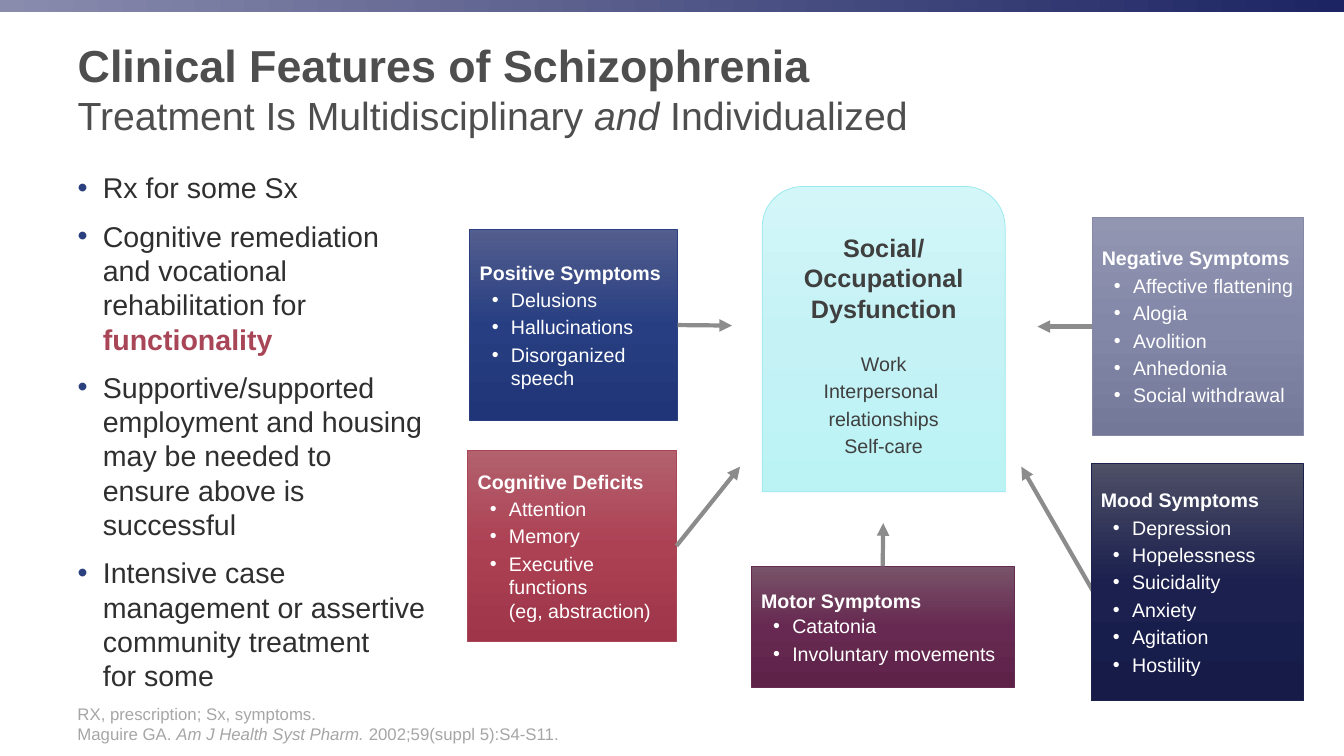
"""Build a slide on the clinical features of schizophrenia."""
from copy import deepcopy

from lxml.etree import SubElement
from pptx import Presentation
from pptx.dml.color import RGBColor as Rgb
from pptx.enum.shapes import MSO_CONNECTOR as Connector, MSO_SHAPE as Preset
from pptx.enum.text import MSO_ANCHOR as Anchor, MSO_AUTO_SIZE as AutoSize, PP_ALIGN as Align
from pptx.oxml.ns import qn
from pptx.util import Inches, Pt

TITLE = [("Clinical Features of Schizophrenia \n", "title"),
         ("Treatment Is Multidisciplinary ", "subtitle"),
         ("and", "subtitle_italic"), (" Individualized", "subtitle")]
TREATMENTS = [
    [("Rx for some Sx", "body")],
    [("Cognitive remediation and vocational rehabilitation for ", "body"),
     ("functionality", "body_accent")],
    [("Supportive/supported employment and housing may be needed to ensure above is successful",
      "body")],
    [("Intensive case management or assertive community treatment\nfor some", "body")],
]
FOOTNOTES = [
    [("RX, prescription; Sx, symptoms.", "note")],
    [("Maguire GA. ", "note"), ("Am J Health Syst Pharm.", "note_italic"),
     (" 2002;59(suppl 5):S4-S11.", "note")],
]
DYSFUNCTION = "Social/\nOccupational\nDysfunction"
AREAS = ["Work", "Interpersonal ", "relationships", "Self-care"]
SYMPTOMS = {
    "Motor Symptoms": ["Catatonia", "Involuntary movements"],
    "Negative Symptoms": ["Affective flattening", "Alogia", "Avolition", "Anhedonia",
                          "Social withdrawal"],
    "Mood Symptoms": ["Depression", "Hopelessness", "Suicidality", "Anxiety", "Agitation",
                      "Hostility"],
    "Positive Symptoms": ["Delusions", "Hallucinations", "Disorganized speech"],
    "Cognitive Deficits": ["Attention", "Memory", "Executive functions\n(eg, abstraction)"],
}
PLACES = {
    "Motor Symptoms": (7.45, 5.62, 2.61, 1.2),
    "Negative Symptoms": (10.83, 2.16, 2.1, 2.16),
    "Mood Symptoms": (10.82, 4.6, 2.11, 2.35),
    "Positive Symptoms": (4.66, 2.28, 2.06, 1.89),
    "Cognitive Deficits": (4.64, 4.47, 2.07, 1.89),
}
MOOD_ARROW = (10.93, 6.02, 10.13, 4.63)
ARROWS = {
    "Negative Symptoms": (1, 10.29, 3.24),
    "Motor Symptoms": (0, 8.76, 5.19),
    "Cognitive Deficits": (3, 7.34, 4.63),
    "Positive Symptoms": (3, 7.26, 3.23),
}
THEME = {
    "font": "Arial",
    "arrow": "8C8C8C",
    "bullet": "2B407E",
    "bullet_light": "FFFFFF",
    "bar": ["898CAD", "1C2463"],
    "text": {
        "title": (32, "4D4E4D", True, False),
        "subtitle": (28, "4D4E4D", False, False),
        "subtitle_italic": (28, "4D4E4D", False, True),
        "body": (20.4, "2F2F2F", False, False),
        "body_accent": (20.4, "A84657", True, False),
        "note": (12, "A6A6A6", False, False),
        "note_italic": (12, "A6A6A6", False, True),
        "heading": (14, "FFFFFF", True, False),
        "item": (14, "FFFFFF", False, False),
        "core": (18, "3F3F3F", True, False),
        "area": (14, "3F3F3F", False, False),
    },
    "panel": {
        "Motor Symptoms": (["785369", "672951", "5E2249"], "642C50"),
        "Negative Symptoms": (["9396B1", "8388A9", "737798"], "8589A7"),
        "Mood Symptoms": (["4E5066", "1B204E", "161B48"], "1D224C"),
        "Positive Symptoms": (["535E8E", "273E82", "1F3577"], "2B407E"),
        "Cognitive Deficits": (["B3616D", "AD4154", "9E3548"], "A84657"),
        "core": (["D3F6F8", "C4F2F5", "BBF3F5"], "98E9ED"),
    },
}
TIGHT = {"space_before": Pt(1.4), "space_after": Pt(1.4)}


def apply(target, values):
    """Set every attribute named in values."""
    for name, value in values.items():
        setattr(target, name, value)


def place(box, left, top, width, height):
    """Move and size a box given in inches."""
    apply(box, {"left": Inches(left), "top": Inches(top),
                "width": Inches(width), "height": Inches(height)})


def prepare(box, anchor):
    """Return the wrapped text frame of a box."""
    apply(box.text_frame, {"word_wrap": True, "auto_size": AutoSize.NONE,
                           "vertical_anchor": anchor})
    return box.text_frame


def write(frame, spans, bullet=None, indent=(0, 0), **layout):
    """Add a paragraph of styled spans to a frame."""
    para = frame.paragraphs[0] if not frame.text else frame.add_paragraph()
    apply(para, {"alignment": Align.LEFT, "space_before": Pt(0), **layout})
    for text, style in spans:
        size, color, bold, italic = THEME["text"][style]
        for number, line in enumerate(text.split("\n")):
            if number:
                para.add_line_break()
            if line:
                span = para.add_run()
                span.text = line
                apply(span.font, {"name": THEME["font"], "size": Pt(size),
                                  "bold": bold, "italic": italic})
                span.font.color.rgb = Rgb.from_string(color)
    if bullet:
        props = para._p.get_or_add_pPr()
        margin, hanging = indent
        props.set("marL", str(Inches(margin)))
        props.set("indent", str(-Inches(hanging)))
        SubElement(SubElement(props, qn("a:buClr")), qn("a:srgbClr"), val=bullet)
        SubElement(props, qn("a:buFont"), typeface=THEME["font"])
        SubElement(props, qn("a:buChar"), char="•")


def add_panel(page, preset, position, colors, angle, outline=None):
    """Add a shape with an evenly spaced gradient."""
    box = page.shapes.add_shape(preset, *map(Inches, position))
    box.shadow.inherit = False
    box.fill.gradient()
    box.fill.gradient_angle = angle
    stops = next(box._element.spPr.iter(qn("a:gsLst")))
    for _ in colors[2:]:
        stops.append(deepcopy(stops[0]))
    for number, (stop, color) in enumerate(zip(box.fill.gradient_stops, colors)):
        stop.color.rgb = Rgb.from_string(color)
        stop.position = number / (len(colors) - 1)
    if outline:
        box.line.color.rgb = Rgb.from_string(outline)
        box.line.width = Pt(0.5)
    else:
        box.line.fill.background()
    return box


def add_arrow(page, *ends):
    """Add a grey arrow between two points in inches."""
    arrow = page.shapes.add_connector(Connector.STRAIGHT, *map(Inches, ends))
    arrow.line.color.rgb = Rgb.from_string(THEME["arrow"])
    arrow.line.width = Pt(3)
    SubElement(arrow.line._get_or_add_ln(), qn("a:tailEnd"), type="triangle")
    SubElement(arrow._element.spPr, qn("a:effectLst"))
    return arrow


def main():
    """Compose and save the slide."""
    deck = Presentation()
    apply(deck, {"slide_width": Inches(13.33), "slide_height": Inches(7.5)})
    page = deck.slides.add_slide(deck.slide_layouts[1])
    add_panel(page, Preset.RECTANGLE, (0, 0, 13.33, 0.12), THEME["bar"], 0)

    title, body = page.placeholders
    place(title, 0.67, 0.22, 11.75, 1.3)
    write(prepare(title, Anchor.MIDDLE), TITLE)
    place(body, 0.67, 1.64, 3.65, 5.12)
    frame = prepare(body, Anchor.TOP)
    for spans in TREATMENTS:
        write(frame, spans, THEME["bullet"], (0.25, 0.25), space_before=Pt(10))

    add_arrow(page, *MOOD_ARROW)
    panels = {}
    for name, items in SYMPTOMS.items():
        colors, outline = THEME["panel"][name]
        panels[name] = add_panel(page, Preset.RECTANGLE, PLACES[name], colors, 270, outline)
        frame = prepare(panels[name], Anchor.MIDDLE)
        write(frame, [(name, "heading")], **({} if name == "Motor Symptoms" else TIGHT))
        for item in items:
            write(frame, [(item, "item")], THEME["bullet_light"], (0.31, 0.19), **TIGHT)

    colors, outline = THEME["panel"]["core"]
    core = add_panel(page, Preset.ROUND_2_SAME_RECTANGLE, (7.56, 1.85, 2.41, 3.03),
                     colors, 270, outline)
    frame = prepare(core, Anchor.MIDDLE)
    write(frame, [(DYSFUNCTION, "core")], alignment=Align.CENTER, space_after=Pt(19))
    for area in AREAS:
        write(frame, [(area, "area")], **TIGHT, alignment=Align.CENTER)

    for name, (side, *tip) in ARROWS.items():
        add_arrow(page, *tip, *tip).begin_connect(panels[name], side)

    notes = page.shapes.add_textbox(*map(Inches, (0.67, 6.95, 12.2, 0.48)))
    frame = prepare(notes, Anchor.BOTTOM)
    for spans in FOOTNOTES:
        write(frame, spans, line_spacing=0.85, space_before=Pt(2.4))
    deck.save("out.pptx")


if __name__ == "__main__":
    main()
